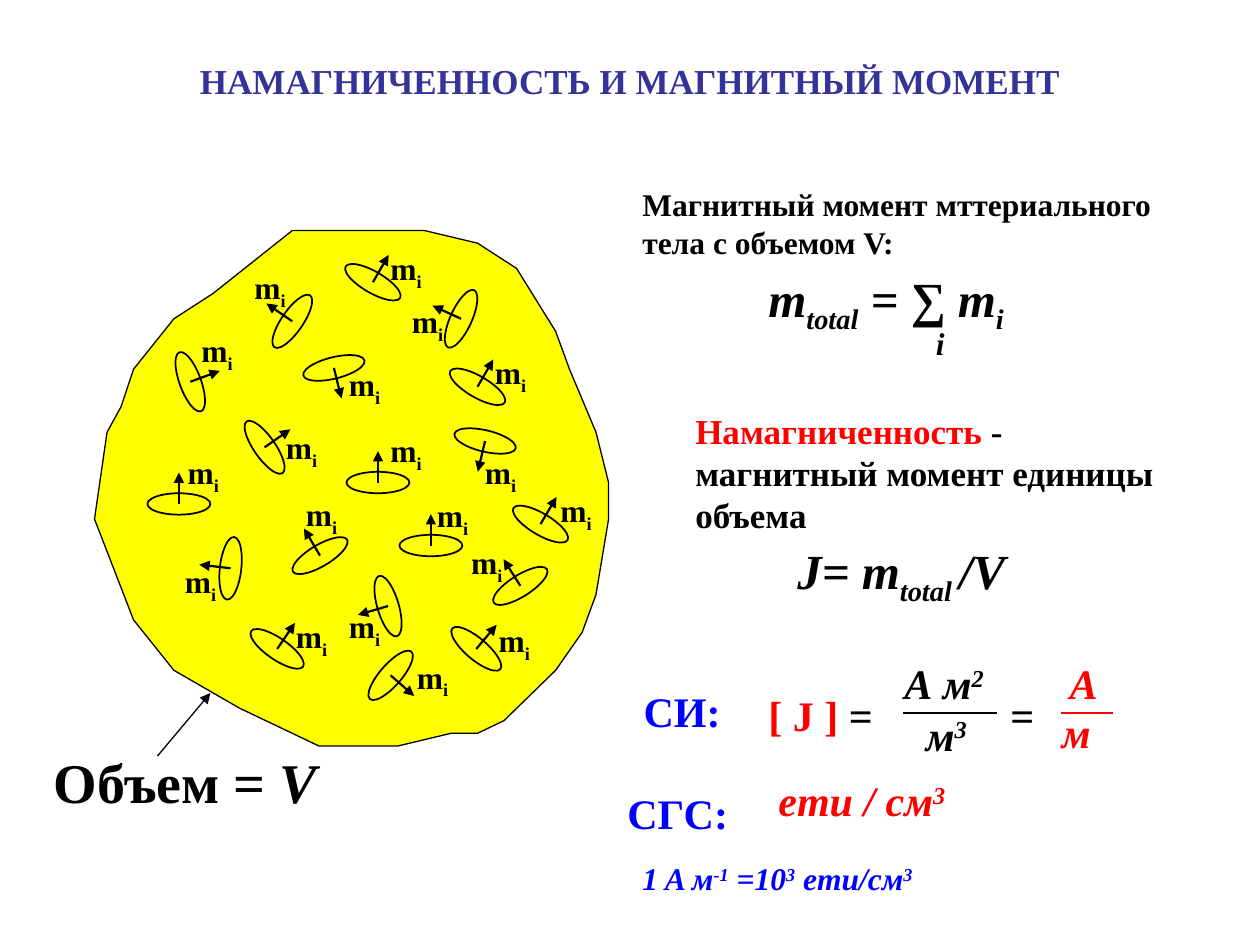
from math import cos, radians, sin

from lxml import etree
from pptx import Presentation
from pptx.dml.color import RGBColor
from pptx.enum.shapes import MSO_CONNECTOR, MSO_SHAPE
from pptx.enum.text import MSO_ANCHOR, PP_ALIGN
from pptx.oxml.ns import qn
from pptx.util import Inches, Pt

BLACK = RGBColor(0x00, 0x00, 0x00)
RED = RGBColor(0xFF, 0x00, 0x00)
BLUE = RGBColor(0x00, 0x00, 0xFF)
INDIGO = RGBColor(0x33, 0x33, 0x99)
YELLOW = RGBColor(0xFF, 0xFF, 0x00)
FONT = "Times New Roman"
SUB, SUP = -25, 30

# Outline points of the body, relative to its box
BODY_OUTLINE = [
    (0.94, 0.5), (1.57, 0), (2.62, 0), (3.04, 0.1), (3.35, 0.3), (3.66, 0.8),
    (3.77, 1.1), (3.98, 1.6), (4.08, 2), (4.08, 2.29), (3.98, 2.89),
    (3.87, 3.19), (3.66, 3.49), (3.25, 3.89), (3.04, 3.99), (2.83, 3.99),
    (2.41, 4.09), (1.78, 4.09), (1.57, 3.99), (1.15, 3.79), (0.63, 3.49),
    (0.31, 3.09), (0, 2.29), (0.1, 1.6), (0.21, 1.4), (0.31, 1.1), (0.63, 0.7),
]
# Centre of each current loop, its rotation, and the corner of its label
MOMENTS = [
    (2.21, 0.41, 30, 2.25, 0.1), (1.57, 0.72, 304.5, 1.17, 0.25),
    (2.91, 0.7, 294.4, 2.42, 0.52), (0.76, 1.2, 69.9, 0.75, 0.75),
    (1.9, 1.09, 166.1, 1.92, 1.02), (3.04, 1.24, 30, 3.08, 0.92),
    (1.35, 1.72, 55.2, 1.42, 1.52), (1.79, 2.58, 329.4, 1.58, 2.05),
    (2.67, 2.5, 0, 2.62, 2.06), (2.25, 2, 0, 2.25, 1.54),
    (2.33, 2.98, 253.6, 1.92, 2.94), (2.35, 3.53, 131.2, 2.46, 3.34),
    (3.03, 3.32, 40.3, 3.11, 3.05), (3.54, 2.33, 30.6, 3.6, 2.02),
    (3.1, 1.67, 193.3, 3, 1.72), (1.45, 3.32, 34.4, 1.5, 3.02),
    (1.08, 2.68, 276.5, 0.62, 2.58), (0.67, 2.17, 0, 0.64, 1.72),
    (3.38, 2.82, 327.8, 2.89, 2.43),
]


def write(tf, runs, size, color=BLACK, italic=False):
    """Fill a frame with runs: plain strings or (text, changes) pairs."""
    tf.word_wrap = True
    p = tf.paragraphs[0]
    for run in runs:
        text, changes = (run, {}) if isinstance(run, str) else run
        look = {"color": color, "italic": italic, "base": 0, **changes}
        r = p.add_run()
        r.text = text
        values = {"name": FONT, "size": Pt(size), "bold": True, "italic": look["italic"]}
        for key, value in values.items():
            setattr(r.font, key, value)
        r.font.color.rgb = look["color"]
        if look["base"]:
            r.font._element.set("baseline", str(look["base"] * 1000))
    return p


def add_text(s, box, runs, size, **look):
    tb = s.shapes.add_textbox(*map(Inches, box))
    write(tb.text_frame, runs, size, **look)


def add_line(shapes, start, end, width, color=BLACK, arrow=False):
    ends = map(Inches, (*start, *end))
    line = shapes.add_connector(MSO_CONNECTOR.STRAIGHT, *ends)
    line.line.color.rgb = color
    line.line.width = Pt(width)
    if arrow:
        etree.SubElement(line.line._get_or_add_ln(), qn("a:tailEnd"), type="triangle")
    etree.SubElement(line._element.spPr, qn("a:effectLst"))


def add_title(s, box, text):
    title = s.shapes.title
    title.left, title.top, title.width, title.height = map(Inches, box)
    title.text_frame.vertical_anchor = MSO_ANCHOR.TOP
    write(title.text_frame, [text], 20, INDIGO).alignment = PP_ALIGN.CENTER


def add_loop(s, x, y, rotation, width=0.5, height=0.17, arrow=0.25):
    """Draw a current loop with its moment arrow along the loop's normal."""
    group = s.shapes.add_group_shape()
    corner = (x - width / 2, y - height / 2, width, height)
    loop = group.shapes.add_shape(MSO_SHAPE.OVAL, *map(Inches, corner))
    loop.rotation = rotation
    loop.shadow.inherit = False
    loop.fill.background()
    loop.line.color.rgb = BLACK
    loop.line.width = Pt(1)
    angle = radians(rotation)
    tip = (x + arrow * sin(angle), y - arrow * cos(angle))
    add_line(group.shapes, (x, y), tip, 1.25, arrow=True)


def add_body(s, left, top):
    points = [(Inches(left + x), Inches(top + y)) for x, y in BODY_OUTLINE]
    builder = s.shapes.build_freeform(*points[0])
    builder.add_line_segments(points[1:], close=True)
    body = builder.convert_to_shape()
    body.shadow.inherit = False
    body.fill.solid()
    body.fill.fore_color.rgb = YELLOW
    body.line.color.rgb = BLACK
    body.line.width = Pt(0.75)

    for x, y, rotation, _, _ in MOMENTS:
        add_loop(s, left + x, top + y, rotation)
    for *_, x, y in MOMENTS:
        add_text(s, (left + x, top + y, 0.5, 0.4), ["m", ("i", {"base": SUB})], 18)

    add_line(s.shapes, (left + 0.5, top + 4.17), (left + 0.92, top + 3.67), 0.75, arrow=True)
    add_text(s, (left - 0.42, top + 4.05, 2.58, 0.64),
             ["Объем = ", ("V", {"italic": True})], 32)


def add_definitions(s, left, top):
    sub = {"base": SUB}
    add_text(s, (left, top, 4.5, 0.71),
             ["Магнитный момент мттериального тела с объемом V:"], 18)
    add_text(s, (left + 1, top + 0.66, 2.42, 0.57),
             ["m", ("total", sub), " = ∑ m", ("i", sub)], 28, italic=True)
    add_text(s, (left + 2.33, top + 1.1, 0.25, 0.4), ["i"], 18, italic=True)
    add_text(s, (left + 0.42, top + 1.78, 4, 1.11),
             [("Намагниченность", {"color": RED}), " - магнитный момент единицы объема"], 20)
    add_text(s, (left + 1.23, top + 2.82, 2.44, 0.57),
             ["J= m", ("total ", sub), "/V"], 28, italic=True)


def add_units(s, left, top):
    sup = {"base": SUP}
    bar = top + 0.49
    add_text(s, (left + 0.01, top + 0.22, 1.15, 0.5), ["СИ:"], 24, color=BLUE)
    add_text(s, (left + 1, top + 0.25, 1.33, 0.51), [("[ J ]", {"color": RED}), " ="], 24)
    add_text(s, (left + 2.08, top, 0.92, 0.51), ["А м", ("2", sup)], 24, italic=True)
    add_text(s, (left + 2.25, top + 0.41, 0.58, 0.51), ["м", ("3", sup)], 24, italic=True)
    add_line(s.shapes, (left + 2.17, bar), (left + 2.91, bar), 0.75)
    add_text(s, (left + 2.92, top + 0.25, 1.33, 0.5), ["="], 24)
    add_text(s, (left + 3.39, top, 0.92, 0.5), ["A"], 24, color=RED, italic=True)
    add_text(s, (left + 3.33, top + 0.39, 0.58, 0.51), ["м"], 24, color=RED, italic=True)
    add_line(s.shapes, (left + 3.42, bar), (left + 3.83, bar), 1.5, RED)

    add_text(s, (left - 0.12, top + 1.03, 1.29, 0.51), ["СГС:"], 24, color=BLUE)
    add_text(s, (left + 1.08, top + 0.93, 2, 0.51),
             ["emu / cм", ("3", sup)], 24, color=RED, italic=True)
    add_text(s, (left, top + 1.6, 4.25, 0.4),
             ["1 A м", ("-1", sup), " =10", ("3", sup), " emu/cм", ("3", sup)],
             18, color=BLUE, italic=True)


def main():
    prs = Presentation()
    prs.slide_width, prs.slide_height = Inches(10), Inches(7.5)
    s = prs.slides.add_slide(prs.slide_layouts[5])
    add_title(s, (0, 0.42, 10, 0.44), "НАМАГНИЧЕННОСТЬ И МАГНИТНЫЙ МОМЕНТ")
    add_body(s, 0.75, 1.83)
    add_definitions(s, 5, 1.42)
    add_units(s, 5, 5.17)
    prs.save("out.pptx")


if __name__ == "__main__":
    main()
